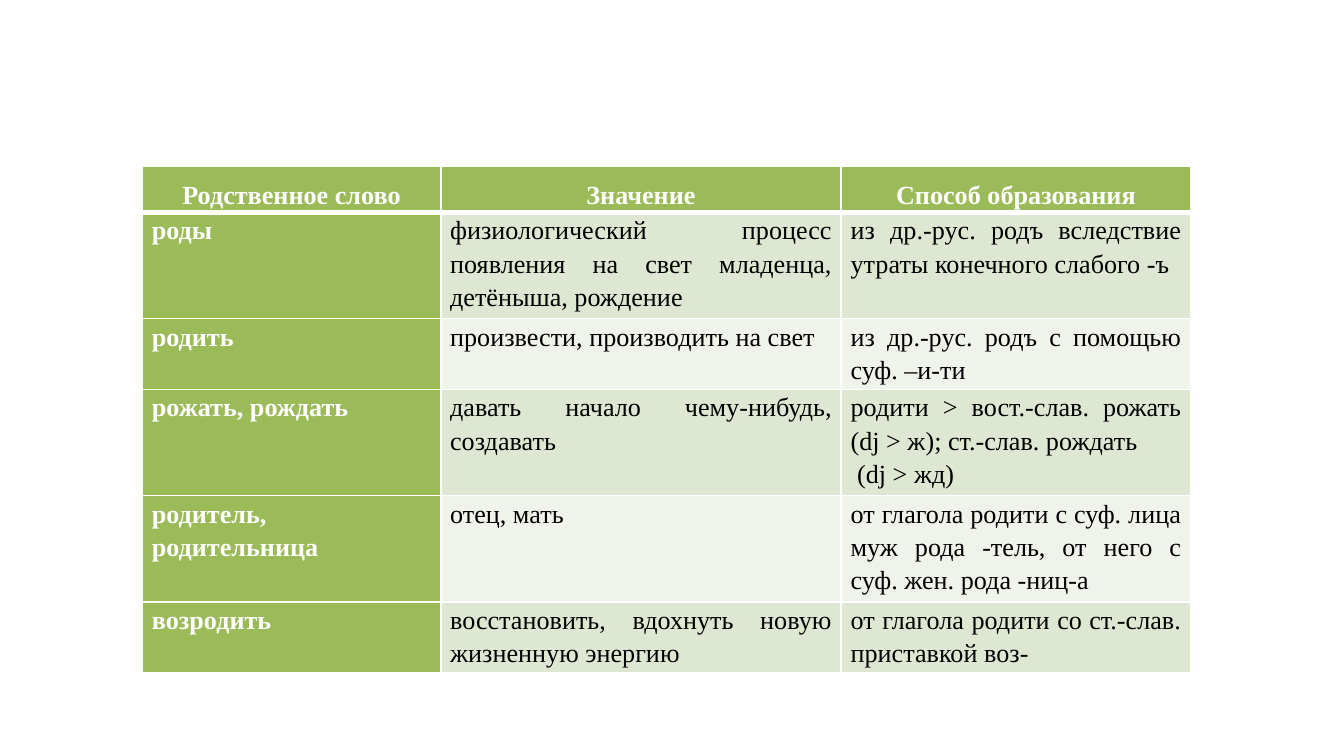
from dataclasses import dataclass

from lxml.etree import SubElement
from pptx import Presentation
from pptx.dml.color import RGBColor as RGB
from pptx.enum.text import PP_ALIGN as Align
from pptx.oxml.ns import qn
from pptx.util import Inches, Pt


@dataclass(frozen=True)
class Theme:
    font: str = "Times New Roman"
    size: int = 14
    light: str = "FFFFFF"
    dark: str = "000000"
    accent: str = "9BBB59"
    bands: tuple = ("DEE7D1", "EFF3EA")
    rule: int = 1
    header_rule: int = 3


THEME = Theme()

HEADER = ["Родственное слово", "Значение", "Способ образования"]
WORDS = [
    ["роды",
     "физиологический процесс появления на свет младенца, детёныша, рождение",
     "из др.-рус. родъ вследствие утраты конечного слабого -ъ "],
    ["родить",
     "произвести, производить на свет ",
     "из др.-рус. родъ с помощью суф. –и-ти "],
    ["рожать, рождать",
     "давать начало чему-нибудь, создавать",
     "родити > вост.-слав. рожать (dj > ж); ст.-слав. рождать\n (dj > жд)"],
    ["родитель, родительница",
     "отец, мать",
     "от глагола родити с суф. лица муж рода -тель, от него с суф. жен. рода -ниц-а  "],
    ["возродить ",
     "восстановить, вдохнуть новую жизненную энергию",
     "от глагола родити со ст.-слав. приставкой воз-"],
]
COLUMN_SHARES = [2.22, 2.98, 2.6]
ROW_LINES = [1.3, 3, 2, 3, 3, 2]


def write_text(tf, text, *, color, bold=False, align=Align.JUSTIFY, spacing=1.15):
    tf.word_wrap = True
    for i, line in enumerate(text.split("\n")):
        p = tf.paragraphs[0] if i == 0 else tf.add_paragraph()
        p.alignment = align
        p.line_spacing = spacing
        r = p.add_run()
        r.text = line
        r.font.name = THEME.font
        r.font.size = Pt(THEME.size)
        r.font.bold = bold
        r.font.color.rgb = RGB.from_string(color)


def set_borders(cell, **widths):
    tcPr = cell._tc.get_or_add_tcPr()
    for side in "LRTB":
        width = widths.get(side, THEME.rule)
        ln = SubElement(tcPr, qn(f"a:ln{side}"), w=str(int(Pt(width))))
        fill = SubElement(ln, qn("a:solidFill"))
        SubElement(fill, qn("a:srgbClr"), val=THEME.light)


def style_cell(cell, fill, **borders):
    cell.margin_left = cell.margin_right = Inches(0.07)
    cell.margin_top = cell.margin_bottom = 0
    set_borders(cell, **borders)
    cell.fill.solid()
    cell.fill.fore_color.rgb = RGB.from_string(fill)


def add_word_table(s, left, top, width, height):
    rows = [HEADER, *WORDS]
    table = s.shapes.add_table(
        len(rows), len(HEADER), left, top, width, height).table
    for column, share in zip(table.columns, COLUMN_SHARES):
        column.width = int(width * share / sum(COLUMN_SHARES))
    for row, lines in zip(table.rows, ROW_LINES):
        row.height = int(height * lines / sum(ROW_LINES))

    for i, texts in enumerate(rows):
        for j, text in enumerate(texts):
            cell = table.cell(i, j)
            if i == 0:
                style_cell(cell, THEME.accent, B=THEME.header_rule)
                write_text(cell.text_frame, text, color=THEME.light, bold=True,
                           align=Align.CENTER, spacing=1.5)
                continue
            label = j == 0
            fill = THEME.accent if label else THEME.bands[(i - 1) % 2]
            style_cell(cell, fill, T=THEME.header_rule if i == 1 else THEME.rule)
            write_text(cell.text_frame, text, bold=label,
                       color=THEME.light if label else THEME.dark)


def main():
    prs = Presentation()
    prs.slide_width = Inches(10)
    prs.slide_height = prs.slide_width * 9 // 16
    s = prs.slides.add_slide(prs.slide_layouts[6])
    w, h = prs.slide_width, prs.slide_height
    add_word_table(s, int(w * 0.106), int(h * 0.22), int(w * 0.78), int(h * 0.67))
    prs.save("out.pptx")


if __name__ == "__main__":
    main()
